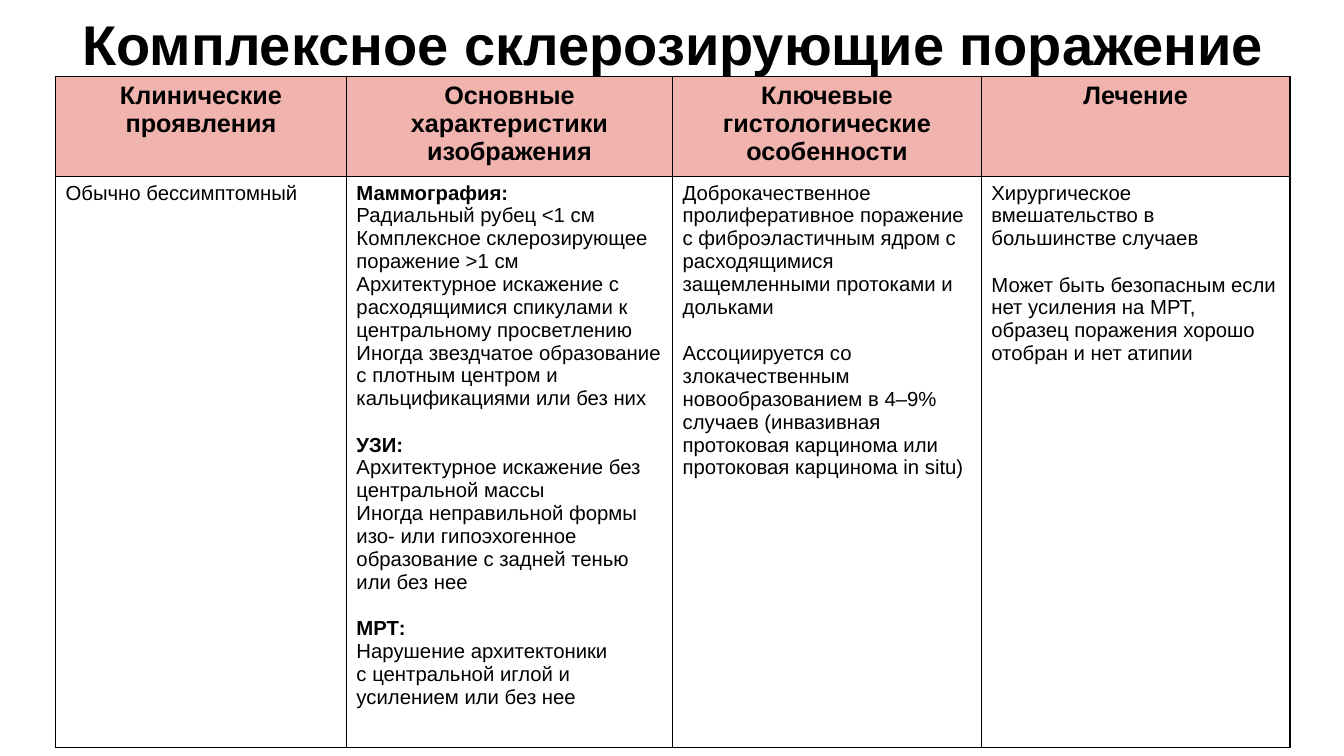
from dataclasses import dataclass

from lxml import etree
from pptx import Presentation
from pptx import util as u
from pptx.dml.color import RGBColor
from pptx.enum import text
from pptx.oxml import ns


@dataclass(frozen=True)
class Theme:
    font: str = "Arial"
    ink: str = "000000"
    header_fill: str = "F0B3AE"
    body_fill: str = "FFFFFF"
    title_size: float = 40
    header_size: float = 18
    body_size: float = 14.5
    section_gap: float = 16.7
    border: float = 1


TITLE = "Комплексное склерозирующие поражение"
COLUMN_WIDTHS = (7.33, 8.22, 7.78, 7.78)
ROW_HEIGHTS = (2.53, 14.39)
HEADERS = (
    "Клинические проявления",
    "Основные характеристики изображения",
    "Ключевые гистологические особенности",
    "Лечение",
)
# Each column holds sections of (heading, paragraphs).
COLUMNS = (
    [(None, ["Обычно бессимптомный"])],
    [
        ("Маммография:", [
            "Радиальный рубец <1 см",
            "Комплексное склерозирующее поражение >1 см",
            "Архитектурное искажение с расходящимися спикулами к центральному просветлению",
            "Иногда звездчатое образование с плотным центром и кальцификациями или без них",
        ]),
        ("УЗИ:", [
            "Архитектурное искажение без центральной массы",
            "Иногда неправильной формы изо- или гипоэхогенное образование с задней тенью или без нее",
        ]),
        ("МРТ:", [
            "Нарушение архитектоники",
            "с центральной иглой и усилением или без нее",
        ]),
    ],
    [
        (None, ["Доброкачественное пролиферативное поражение с фиброэластичным ядром "
                "с расходящимися защемленными протоками и дольками"]),
        (None, ["Ассоциируется со злокачественным новообразованием в 4–9% случаев "
                "(инвазивная протоковая карцинома или протоковая карцинома in situ)"]),
    ],
    [
        (None, ["Хирургическое вмешательство в большинстве случаев"]),
        (None, ["Может быть безопасным если нет усиления на МРТ,\n"
                "образец поражения хорошо отобран и нет атипии"]),
    ],
)


class SlideBuilder:
    def __init__(self, prs, theme):
        self.theme = theme
        self.slide = prs.slides.add_slide(prs.slide_layouts[5])

    def add_text(self, p, content, size, bold=False, align=text.PP_ALIGN.LEFT):
        """Fill a paragraph; a newline in the content becomes a line break."""
        p.alignment = align
        for i, line in enumerate(content.split("\n")):
            if i:
                p.add_line_break()
            r = p.add_run()
            r.text = line
            r.font.name = self.theme.font
            r.font.size = u.Pt(size)
            r.font.bold = bold
            r.font.color.rgb = RGBColor.from_string(self.theme.ink)

    def title(self, content, left, top, width, height):
        sp = self.slide.shapes.title
        sp.left, sp.top, sp.width, sp.height = map(u.Cm, (left, top, width, height))
        tf = sp.text_frame
        tf.auto_size = text.MSO_AUTO_SIZE.NONE
        tf.word_wrap = True
        tf.vertical_anchor = text.MSO_ANCHOR.TOP
        tf.margin_top = u.Cm(0.25)
        self.add_text(tf.paragraphs[0], content, self.theme.title_size, True,
                      text.PP_ALIGN.CENTER)

    def style_cell(self, cell, fill):
        """Draw all four borders and fill the cell."""
        props = cell._tc.get_or_add_tcPr()
        for side in ("lnL", "lnR", "lnT", "lnB"):
            line = etree.SubElement(props, ns.qn(f"a:{side}"), w=str(u.Pt(self.theme.border)))
            solid = etree.SubElement(line, ns.qn("a:solidFill"))
            etree.SubElement(solid, ns.qn("a:srgbClr"), val=self.theme.ink)
        cell.fill.solid()
        cell.fill.fore_color.rgb = RGBColor.from_string(fill)

    def sections(self, tf, sections):
        p = None
        for heading, paragraphs in sections:
            lines = [(heading, True)] if heading else []
            lines += [(line, False) for line in paragraphs]
            for i, (line, bold) in enumerate(lines):
                first = p is None
                p = tf.paragraphs[0] if first else tf.add_paragraph()
                if i == 0 and not first:
                    p.space_before = u.Pt(self.theme.section_gap)
                self.add_text(p, line, self.theme.body_size, bold)

    def table(self, headers, columns, left, top, widths, heights):
        frame = self.slide.shapes.add_table(
            len(heights), len(widths), u.Cm(left), u.Cm(top),
            u.Cm(sum(widths)), u.Cm(sum(heights)))
        table = frame.table
        table.horz_banding = False
        for row, height in zip(table.rows, heights):
            row.height = u.Cm(height)
        for i, (header, sections, width) in enumerate(zip(headers, columns, widths)):
            table.columns[i].width = u.Cm(width)
            head, body = table.cell(0, i), table.cell(1, i)
            self.style_cell(head, self.theme.header_fill)
            self.style_cell(body, self.theme.body_fill)
            self.add_text(head.text_frame.paragraphs[0], header,
                          self.theme.header_size, True, text.PP_ALIGN.CENTER)
            self.sections(body.text_frame, sections)


def main():
    prs = Presentation()
    prs.slide_width, prs.slide_height = u.Cm(33.87), u.Cm(19.05)
    builder = SlideBuilder(prs, Theme())
    builder.title(TITLE, 0.25, 0, 33.4, 2.74)
    builder.table(HEADERS, COLUMNS, 1.4, 1.92, COLUMN_WIDTHS, ROW_HEIGHTS)
    prs.save("out.pptx")


if __name__ == "__main__":
    main()
